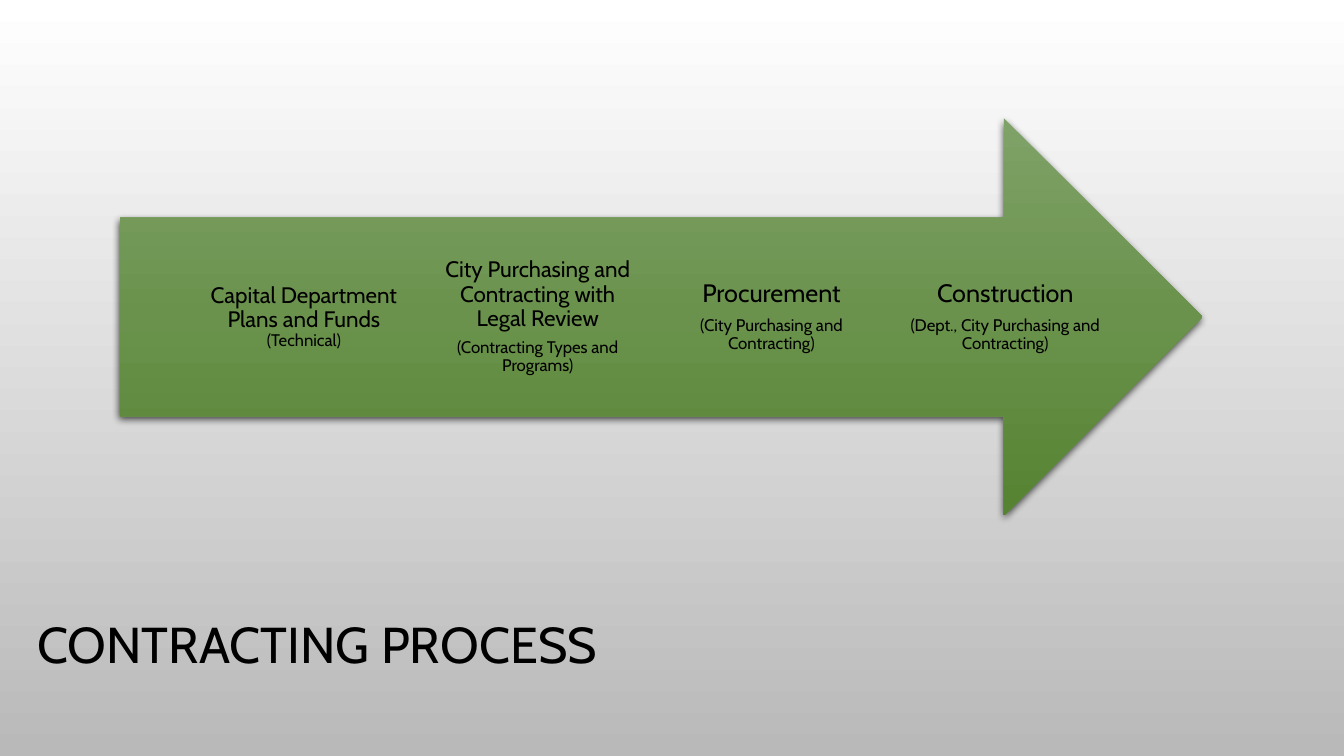
from copy import deepcopy

from lxml import etree
from pptx import Presentation
from pptx.dml.color import RGBColor
from pptx.enum.shapes import MSO_SHAPE
from pptx.enum.text import MSO_ANCHOR, PP_ALIGN
from pptx.oxml.ns import qn
from pptx.util import Pt

ARROW = MSO_SHAPE.RIGHT_ARROW
MIDDLE = MSO_ANCHOR.MIDDLE
LEFT, CENTER = PP_ALIGN.LEFT, PP_ALIGN.CENTER
TITLE_ONLY = 5

# Each step is a list of paragraphs; each paragraph is a list of (text, size).
STEPS = [
    [[("Capital Department Plans and Funds ", 16), ("(Technical)", 12)]],
    [[("City Purchasing and Contracting with Legal Review", 16)],
     [("(Contracting Types and Programs)", 12)]],
    [[("Procurement", 18)], [("(City Purchasing and Contracting)", 12)]],
    [[("Construction", 18)], [("(Dept., City Purchasing and Contracting)", 12)]],
]


def color(code):
    return RGBColor.from_string(code)


def write(par, text, size=12, font="Cabin", ink="000000", align=CENTER):
    """Add a run to a paragraph and format both."""
    par.alignment = align
    par.line_spacing = 0.9
    run = par.add_run()
    run.text = text
    run.font.size = Pt(size)
    run.font.name = font
    run.font.bold = False
    run.font.color.rgb = color(ink)


def shade(fill, root, stops):
    """Fill with a top-to-bottom gradient of (position, colour) stops."""
    fill.gradient()
    fill.gradient_angle = 270
    group = next(root.iter(qn("a:gsLst")))
    while len(group) < len(stops):
        group.append(deepcopy(group[-1]))
    for stop, (place, code) in zip(fill.gradient_stops, stops):
        stop.position = place
        stop.color.rgb = color(code)


class Deck:
    def __init__(self, width, height):
        self.file = Presentation()
        self.file.slide_width = Pt(width)
        self.file.slide_height = Pt(height)
        self.slide = self.file.slides.add_slide(
            self.file.slide_layouts[TITLE_ONLY])

    def ground(self, stops):
        shade(self.slide.background.fill, self.slide.element, stops)

    def title(self, text, box):
        shape = self.slide.shapes.title
        shape.left, shape.top, shape.width, shape.height = map(Pt, box)
        frame = shape.text_frame
        frame.word_wrap = True
        frame.vertical_anchor = MIDDLE
        write(frame.paragraphs[0], text, size=36, align=LEFT)

    def arrow(self, box, stops):
        shape = self.slide.shapes.add_shape(ARROW, *map(Pt, box))
        shade(shape.fill, shape.element, stops)
        shape.line.fill.background()
        self.shadow(shape)

    def shadow(self, shape):
        shape.shadow.inherit = False
        effects = next(shape.element.iter(qn("a:effectLst")))
        outer = etree.SubElement(
            effects, qn("a:outerShdw"), blurRad=str(Pt(5)), dist=str(Pt(2)),
            dir="5400000", algn="ctr", rotWithShape="0")
        tint = etree.SubElement(outer, qn("a:srgbClr"), val="000000")
        etree.SubElement(tint, qn("a:alpha"), val="69000")

    def step(self, pars, box):
        frame = self.slide.shapes.add_textbox(*map(Pt, box)).text_frame
        frame.word_wrap = True
        frame.vertical_anchor = MIDDLE
        frame.margin_left = frame.margin_right = 0
        frame.margin_top = frame.margin_bottom = Pt(14)
        for i, runs in enumerate(pars):
            par = frame.add_paragraph() if i else frame.paragraphs[0]
            for text, size in runs:
                write(par, text, size=size)
            par.space_after = Pt(0.35 * runs[0][1])


def main():
    deck = Deck(960, 540)
    deck.ground([(0, "FFFFFF"), (1, "B9B9B9")])
    deck.title("CONTRACTING PROCESS", (19.5, 403, 672, 119))
    deck.arrow((85.6, 84.5, 773.3, 283.7),
               [(0, "7FA268"), (0.5, "6A924C"), (1, "558331")])
    for i, pars in reversed(list(enumerate(STEPS))):
        deck.step(pars, (147.6 + 167 * i, 155.5, 139, 141.8))
    deck.file.save("out.pptx")


if __name__ == "__main__":
    main()
